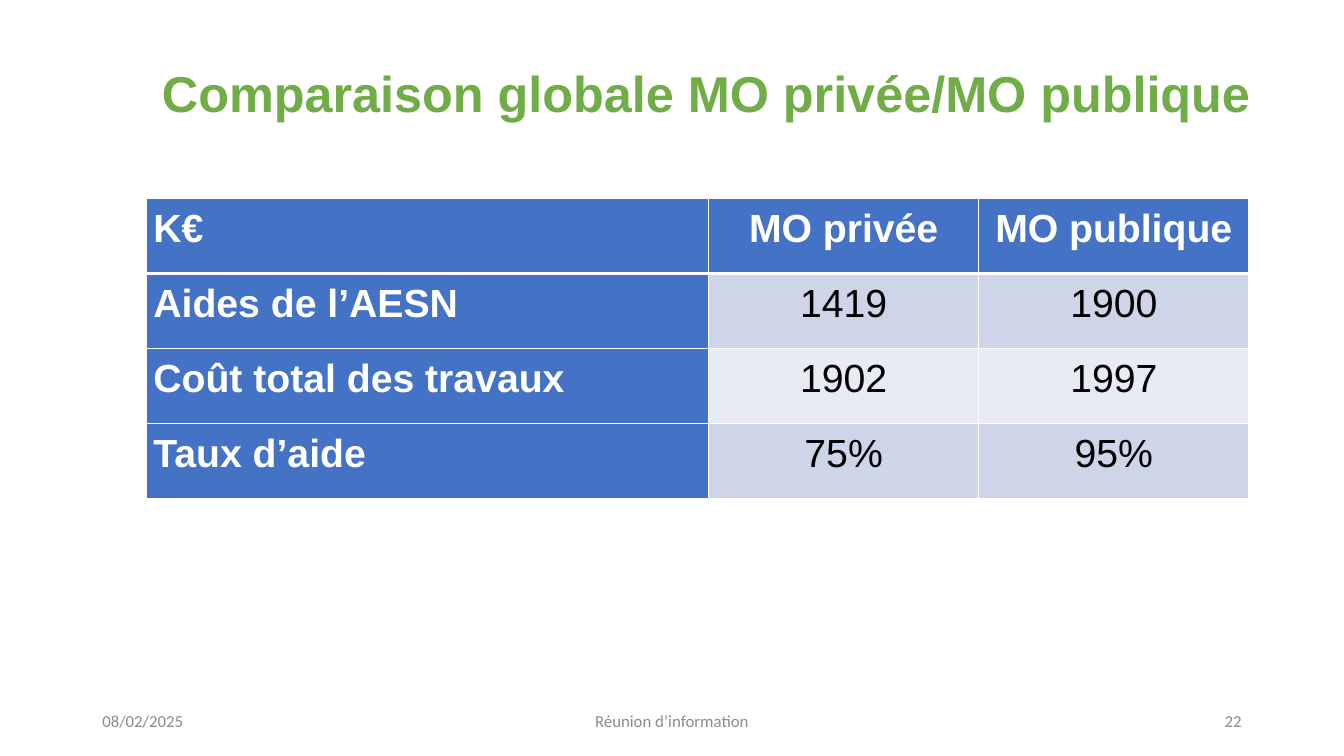
from dataclasses import dataclass

from lxml import etree
from pptx import Presentation
from pptx.dml.color import RGBColor
from pptx.enum.text import MSO_ANCHOR, PP_ALIGN
from pptx.oxml.ns import qn
from pptx.util import Pt

LEFT, MID, RIGHT = PP_ALIGN.LEFT, PP_ALIGN.CENTER, PP_ALIGN.RIGHT
JUST = PP_ALIGN.JUSTIFY
BASE, HALF = MSO_ANCHOR.BOTTOM, MSO_ANCHOR.MIDDLE


@dataclass(frozen=True)
class Theme:
    green: str = "70AD47"
    blue: str = "4472C4"
    bands: tuple = ("CFD5E9", "E8EBF4")
    white: str = "FFFFFF"
    black: str = "000000"
    grey: str = "8B8B8B"
    head: str = "Arial"
    foot: str = "Calibri"
    title: int = 36
    cell: int = 28
    small: int = 12
    thin: float = 0.96
    thick: float = 3


THEME = Theme()

ROWS = (
    ("K€", "MO privée", "MO publique"),
    ("Aides de l’AESN", "1419", "1900"),
    ("Coût total des travaux", "1902", "1997"),
    ("Taux d’aide", "75%", "95%"),
)
COLS = (401.5, 193, 193)
ROW_H = 53.6

# Footer parts: text, left, width, alignment
FOOT = (
    ("08/02/2025", 66, 216, LEFT),
    ("Réunion d’information", 318, 324, MID),
    ("22", 678, 216, RIGHT),
)


def add_run(para, text, font, size, color, bold=False):
    run = para.add_run()
    run.text = text
    run.font.name = font
    run.font.size = Pt(size)
    run.font.bold = bold
    run.font.color.rgb = RGBColor.from_string(color)


def add_text(slide, text, box, align, anchor, *style):
    shape = slide.shapes.add_textbox(*(Pt(v) for v in box))
    frame = shape.text_frame
    frame.word_wrap = True
    frame.vertical_anchor = anchor
    para = frame.paragraphs[0]
    para.alignment = align
    add_run(para, text, *style)
    return para


def add_edge(cell, side, width):
    # Borders must precede the fill in the cell properties
    edge = etree.SubElement(cell._tc.get_or_add_tcPr(), qn(f"a:ln{side}"), w=str(Pt(width)))
    fill = etree.SubElement(edge, qn("a:solidFill"))
    etree.SubElement(fill, qn("a:srgbClr"), val=THEME.white)


def fill_cell(cell, text, row, col):
    label = row == 0 or col == 0
    for side in "LRTB":
        rule = (row, side) in ((0, "B"), (1, "T"))
        add_edge(cell, side, THEME.thick if rule else THEME.thin)
    cell.fill.solid()
    back = THEME.blue if label else THEME.bands[(row - 1) % 2]
    cell.fill.fore_color.rgb = RGBColor.from_string(back)
    cell.margin_left = cell.margin_right = Pt(5)
    cell.margin_top = cell.margin_bottom = Pt(3.6)
    para = cell.text_frame.paragraphs[0]
    para.alignment = MID if col else JUST
    para.line_spacing = 1.07
    para.space_after = Pt(8)
    color = THEME.white if label else THEME.black
    add_run(para, text, THEME.head, THEME.cell, color, label)


def add_grid(slide, left, top):
    size = Pt(sum(COLS)), Pt(ROW_H * len(ROWS))
    grid = slide.shapes.add_table(len(ROWS), len(COLS), Pt(left), Pt(top), *size).table
    for col, width in zip(grid.columns, COLS):
        col.width = Pt(width)
    for r, texts in enumerate(ROWS):
        grid.rows[r].height = Pt(ROW_H)
        for c, text in enumerate(texts):
            fill_cell(grid.cell(r, c), text, r, c)


def main():
    deck = Presentation()
    deck.slide_width, deck.slide_height = Pt(960), Pt(540)
    slide = deck.slides.add_slide(deck.slide_layouts[6])

    # Title
    title = add_text(slide, "Comparaison globale MO privée/MO publique",
                     (103.7, 10, 802, 82), MID, BASE,
                     THEME.head, THEME.title, THEME.green, True)
    title.line_spacing = 0.9

    # Footer
    for text, left, width, align in FOOT:
        add_text(slide, text, (left, 500.5, width, 28.75), align, HALF,
                 THEME.foot, THEME.small, THEME.grey)

    # Table
    add_grid(slide, 104.6, 141.8)

    deck.save("out.pptx")


if __name__ == "__main__":
    main()
